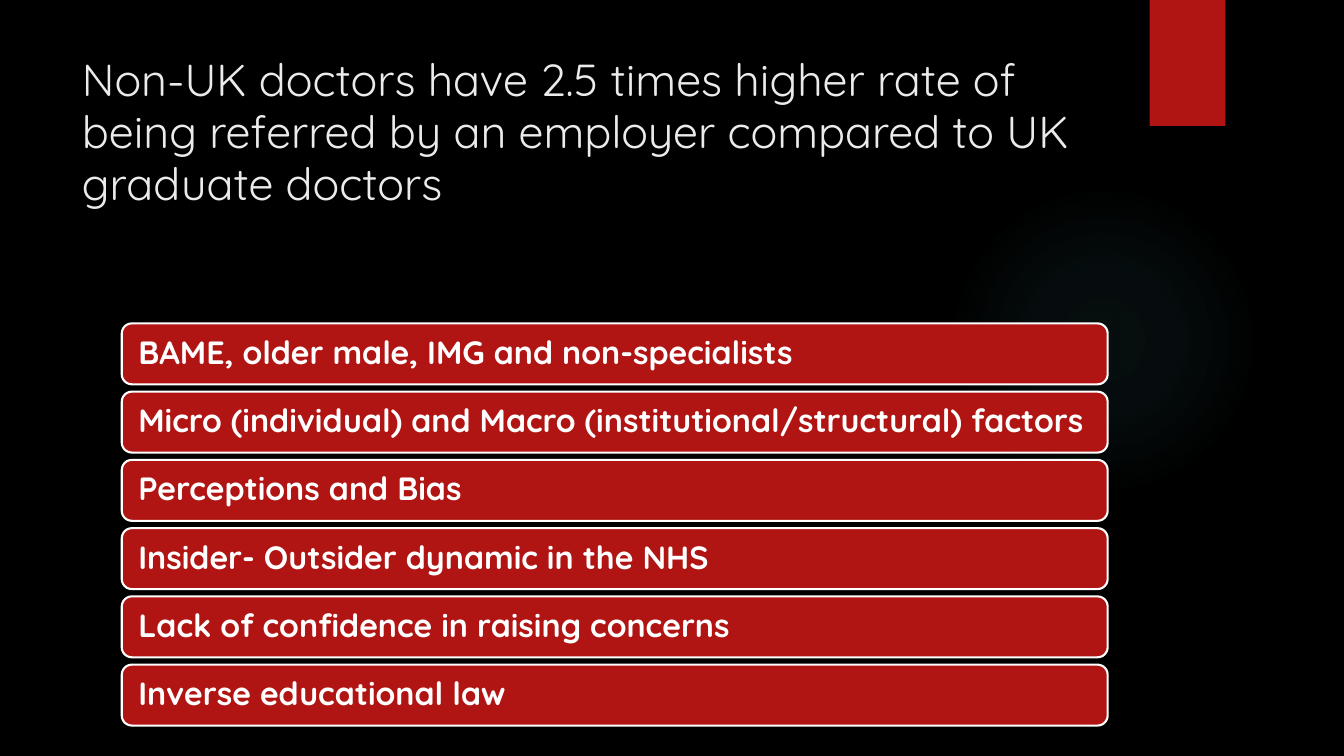
from dataclasses import dataclass

from lxml import etree
from pptx import Presentation
from pptx.dml.color import RGBColor
from pptx.enum.shapes import MSO_SHAPE
from pptx.enum.text import MSO_ANCHOR, PP_ALIGN
from pptx.oxml import parse_xml
from pptx.oxml.ns import qn
from pptx.util import Pt

EMU_PER_PX = 9525
DRAWING_NS = "http://schemas.openxmlformats.org/drawingml/2006/main"

TITLE = ("Non-UK doctors have 2.5 times higher rate of being referred "
         "by an employer compared to UK graduate doctors")
FACTORS = [
    "BAME, older male, IMG and non-specialists",
    "Micro (individual) and Macro (institutional/structural) factors",
    "Perceptions and Bias",
    "Insider- Outsider dynamic in the NHS",
    "Lack of confidence in raising concerns",
    "Inverse educational law",
]


@dataclass(frozen=True)
class Theme:
    font: str = "Quicksand"
    background: str = "000000"
    accent: str = "B01513"
    title: str = "EBEBEB"
    label: str = "FFFFFF"
    glow: str = "50B9C1"
    shadow: str = "000000"
    title_size: int = 32
    label_size: int = 23


def px(*lengths):
    return [length * EMU_PER_PX for length in lengths]


def write_text(frame, text, *, font, size, color, bold=False,
               spacing=1.0, anchor=MSO_ANCHOR.TOP, inset=(10, 5)):
    frame.word_wrap = True
    frame.vertical_anchor = anchor
    side, edge = px(*inset)
    frame.margin_left = frame.margin_right = side
    frame.margin_top = frame.margin_bottom = edge
    para = frame.paragraphs[0]
    para.alignment = PP_ALIGN.LEFT
    para.line_spacing = spacing
    span = para.add_run()
    span.text = text
    span.font.name = font
    span.font.size = Pt(size)
    span.font.bold = bold
    span.font.color.rgb = RGBColor.from_string(color)


class SlideBuilder:
    def __init__(self, page, theme):
        self.page = page
        self.theme = theme

    def background(self):
        fill = self.page.background.fill
        fill.solid()
        fill.fore_color.rgb = RGBColor.from_string(self.theme.background)

    def shape(self, kind, place, fill, outline=None):
        box = self.page.shapes.add_shape(kind, *px(*place))
        box.shadow.inherit = False
        box.fill.solid()
        box.fill.fore_color.rgb = RGBColor.from_string(fill)
        if outline:
            box.line.color.rgb = RGBColor.from_string(outline)
            box.line.width = Pt(1.5)
        else:
            box.line.fill.background()
        return box

    def glow(self, place, stops):
        box = self.shape(MSO_SHAPE.OVAL, place, self.theme.glow)
        stop_xml = "".join(
            f'<a:gs pos="{position * 1000}"><a:srgbClr val="{self.theme.glow}">'
            f'<a:alpha val="{opacity * 1000}"/></a:srgbClr></a:gs>'
            for position, opacity in stops)
        gradient = parse_xml(
            f'<a:gradFill xmlns:a="{DRAWING_NS}"><a:gsLst>{stop_xml}</a:gsLst>'
            '<a:path path="circle"><a:fillToRect l="50000" t="50000" '
            'r="50000" b="50000"/></a:path></a:gradFill>')
        properties = box._element.spPr
        properties.replace(properties.find(qn("a:solidFill")), gradient)

    def ribbon(self, place):
        box = self.shape(MSO_SHAPE.RECTANGLE, place, self.theme.accent)
        effects = box._element.spPr.find(qn("a:effectLst"))
        shadow = etree.SubElement(
            effects, qn("a:outerShdw"), blurRad=str(Pt(3)), dist=str(Pt(2)),
            dir="5400000", rotWithShape="0")
        color = etree.SubElement(shadow, qn("a:srgbClr"), val=self.theme.shadow)
        etree.SubElement(color, qn("a:alpha"), val="45000")

    def title(self, place, text):
        box = self.page.shapes.add_textbox(*px(*place))
        write_text(box.text_frame, text, font=self.theme.font,
                   size=self.theme.title_size, color=self.theme.title,
                   spacing=0.96)

    def bar(self, place, text):
        box = self.shape(MSO_SHAPE.ROUNDED_RECTANGLE, place,
                         self.theme.accent, self.theme.label)
        write_text(box.text_frame, text, font=self.theme.font,
                   size=self.theme.label_size, color=self.theme.label,
                   bold=True, spacing=0.9, anchor=MSO_ANCHOR.MIDDLE,
                   inset=(13, 10))


def main():
    deck = Presentation()
    deck.slide_width, deck.slide_height = px(1280, 720)
    builder = SlideBuilder(deck.slides.add_slide(deck.slide_layouts[6]), Theme())

    # Backdrop
    builder.background()
    builder.glow((903, 176, 296, 296), [(0, 7), (36, 6), (69, 0)])
    builder.ribbon((1095, 0, 72, 120))

    # Title
    builder.title((68, 48, 988, 147), TITLE)

    # Factor bars
    top, pitch = 308, 65
    for row, factor in enumerate(FACTORS):
        builder.bar((116, top + row * pitch, 939, 58), factor)

    deck.save("out.pptx")


if __name__ == "__main__":
    main()
